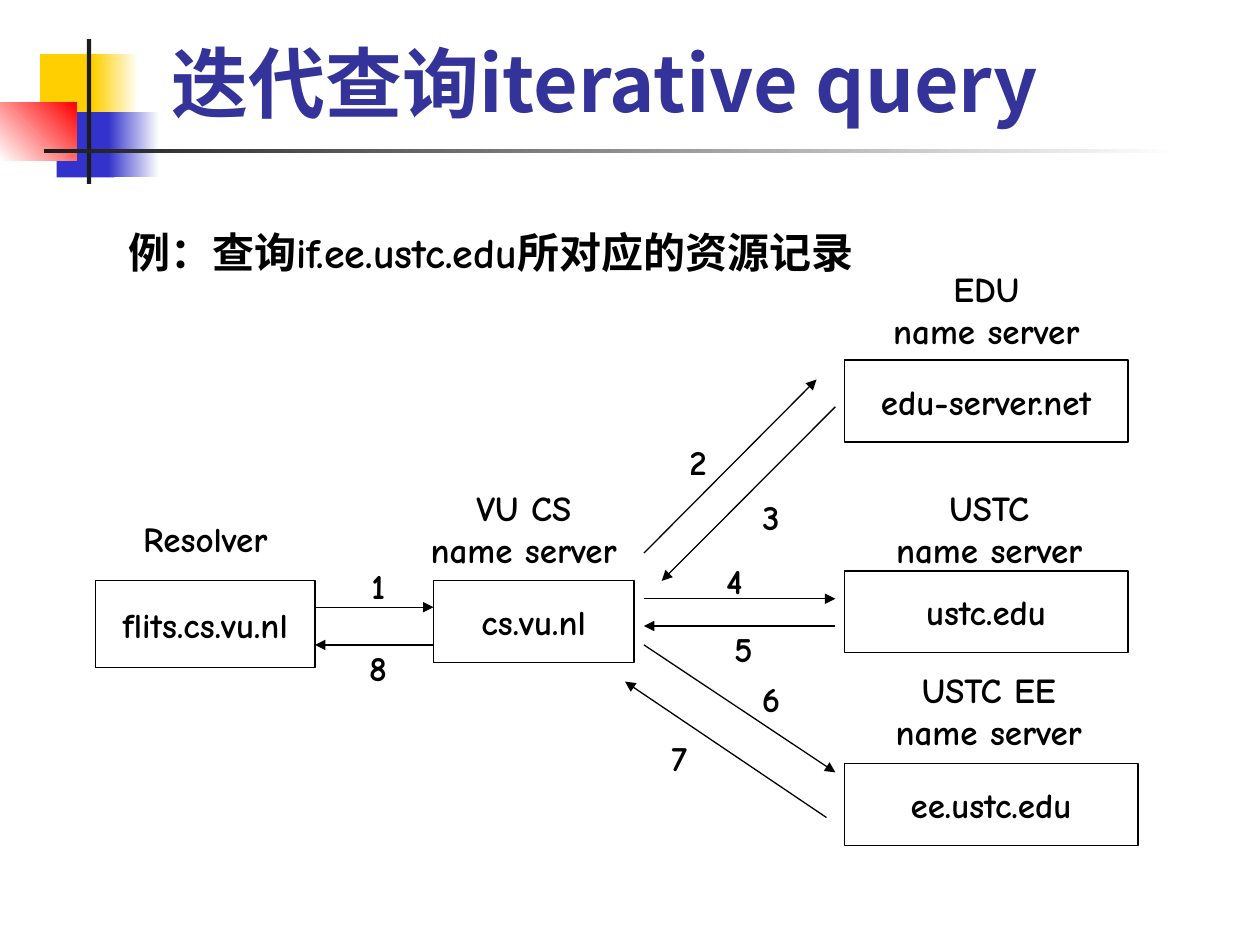
import pptx
import pptx.dml.color
import pptx.enum.shapes
import pptx.enum.text
import pptx.oxml.ns
import pptx.util
from lxml import etree
from pptx.util import Cm

COLORS = {
    "yellow": "FFCF01", "blue": "3333CC", "red": "FF0000", "bar": "1C1C1C",
    "white": "FFFFFF", "title": "333399", "ink": "000000",
}
LATIN_FONT = "Comic Neue"
CJK_FONT = "Noto Sans CJK SC"
ANCHOR = pptx.enum.text.MSO_ANCHOR
ALIGN = pptx.enum.text.PP_ALIGN

# Master decoration: left, top, width, height, first colour, last colour, angle
DECORATION = [
    (0.81, 1.09, 1.22, 1.32, "yellow", None, 0),
    (1.88, 1.09, 0.91, 1.32, "yellow", "white", 0),
    (1.14, 2.26, 1.17, 1.32, "blue", None, 0),
    (2.18, 2.26, 1.02, 1.32, "blue", "white", 0),
    (0, 2.06, 1.55, 1.17, "white", "red", 45),
    (1.75, 0.79, 0.09, 2.92, "bar", None, 0),
    (0.89, 3, 22.86, 0.09, "bar", "white", 0),
]

# Host name, its box, caption, caption box
SERVERS = [
    ("flits.cs.vu.nl", (1.93, 11.71, 4.42, 1.75),
     "Resolver", (1.93, 10.31, 4.42, 1.09)),
    ("cs.vu.nl", (8.74, 11.71, 4.04, 1.65),
     "VU CS\vname server", (7.98, 9.68, 5.16, 1.96)),
    ("edu-server.net", (17.02, 7.26, 5.72, 1.65),
     "EDU\vname server", (17.04, 5.26, 5.69, 1.96)),
    ("ustc.edu", (17.02, 11.51, 5.72, 1.65),
     "USTC\vname server", (16.54, 9.68, 6.81, 1.96)),
    ("ee.ustc.edu", (17.02, 15.39, 5.92, 1.65),
     "USTC EE\vname server", (16.33, 13.36, 7.21, 1.96)),
]

# Step number, arrow start, arrow end, left top of the number
STEPS = [
    ("1", (6.35, 12.24), (8.74, 12.24), (6.71, 11.25)),
    ("2", (12.98, 11.15), (16.46, 7.65), (13.16, 8.76)),
    ("3", (16.84, 8.2), (13.34, 11.71), (14.63, 9.86)),
    ("4", (12.98, 12.07), (16.84, 12.07), (13.89, 11.15)),
    ("5", (16.84, 12.62), (12.98, 12.62), (14.07, 12.52)),
    ("6", (12.98, 13), (16.84, 15.57), (14.63, 13.54)),
    ("7", (16.66, 16.48), (12.6, 13.74), (12.78, 14.73)),
    ("8", (8.74, 13), (6.35, 13), (6.71, 12.9)),
]


def rgb(name):
    return pptx.dml.color.RGBColor.from_string(COLORS[name])


def write_text(shape, text, size=20, font=LATIN_FONT, color="ink",
               align=ALIGN.CENTER, anchor=ANCHOR.TOP, wrap=True):
    frame = shape.text_frame
    frame.text = text
    frame.word_wrap = wrap
    frame.vertical_anchor = anchor
    paragraph = frame.paragraphs[0]
    paragraph.alignment = align
    for run in paragraph.runs:
        run.font.size = pptx.util.Pt(size)
        run.font.bold = True
        run.font.name = font
        run.font.color.rgb = rgb(color)
        east_asian = etree.SubElement(run.font._element, pptx.oxml.ns.qn("a:ea"))
        east_asian.set("typeface", CJK_FONT)


def add_text(slide, box, text, **style):
    write_text(slide.shapes.add_textbox(*map(Cm, box)), text, **style)


def add_rectangle(slide, box):
    rectangle = slide.shapes.add_shape(
        pptx.enum.shapes.MSO_SHAPE.RECTANGLE, *map(Cm, box))
    rectangle.shadow.inherit = False
    return rectangle


def add_decoration(slide, box, first, last, angle):
    block = add_rectangle(slide, box)
    block.line.fill.background()
    if last is None:
        block.fill.solid()
        block.fill.fore_color.rgb = rgb(first)
        return
    block.fill.gradient()
    block.fill.gradient_angle = angle
    for stop, color, position in zip(block.fill.gradient_stops, (first, last), (0, 1)):
        stop.color.rgb = rgb(color)
        stop.position = position


def add_server(slide, host, box):
    server = add_rectangle(slide, box)
    server.fill.background()
    server.line.color.rgb = rgb("ink")
    server.line.width = pptx.util.Pt(0.75)
    write_text(server, host, anchor=ANCHOR.MIDDLE, wrap=False)


def add_arrow(slide, start, end):
    arrow = slide.shapes.add_connector(
        pptx.enum.shapes.MSO_CONNECTOR.STRAIGHT, *map(Cm, start + end))
    arrow.line.color.rgb = rgb("ink")
    arrow.line.width = pptx.util.Pt(0.75)
    head = etree.SubElement(arrow.line._get_or_add_ln(), pptx.oxml.ns.qn("a:tailEnd"))
    head.set("type", "triangle")
    etree.SubElement(arrow._element.spPr, pptx.oxml.ns.qn("a:effectLst"))


def main():
    deck = pptx.Presentation()
    deck.slide_width, deck.slide_height = Cm(25.4), Cm(19.05)
    slide = deck.slides.add_slide(deck.slide_layouts[6])

    # Corner decoration and rule
    for *box, first, last, angle in DECORATION:
        add_decoration(slide, box, first, last, angle)

    # Title and question
    add_text(slide, (3.2, 0.58, 21.64, 2.13), "迭代查询iterative query", size=44,
             font=CJK_FONT, color="title", align=ALIGN.LEFT, anchor=ANCHOR.BOTTOM)
    add_text(slide, (2.34, 4.45, 16.64, 1.27), "例：查询if.ee.ustc.edu所对应的资源记录",
             size=24, align=ALIGN.LEFT, wrap=False)

    # Servers with their captions
    for host, host_box, caption, caption_box in SERVERS:
        add_server(slide, host, host_box)
        add_text(slide, caption_box, caption)

    # Numbered query steps
    for number, start, end, corner in STEPS:
        add_arrow(slide, start, end)
        add_text(slide, corner + (1.83, 1.09), number)

    deck.save("out.pptx")


if __name__ == "__main__":
    main()
